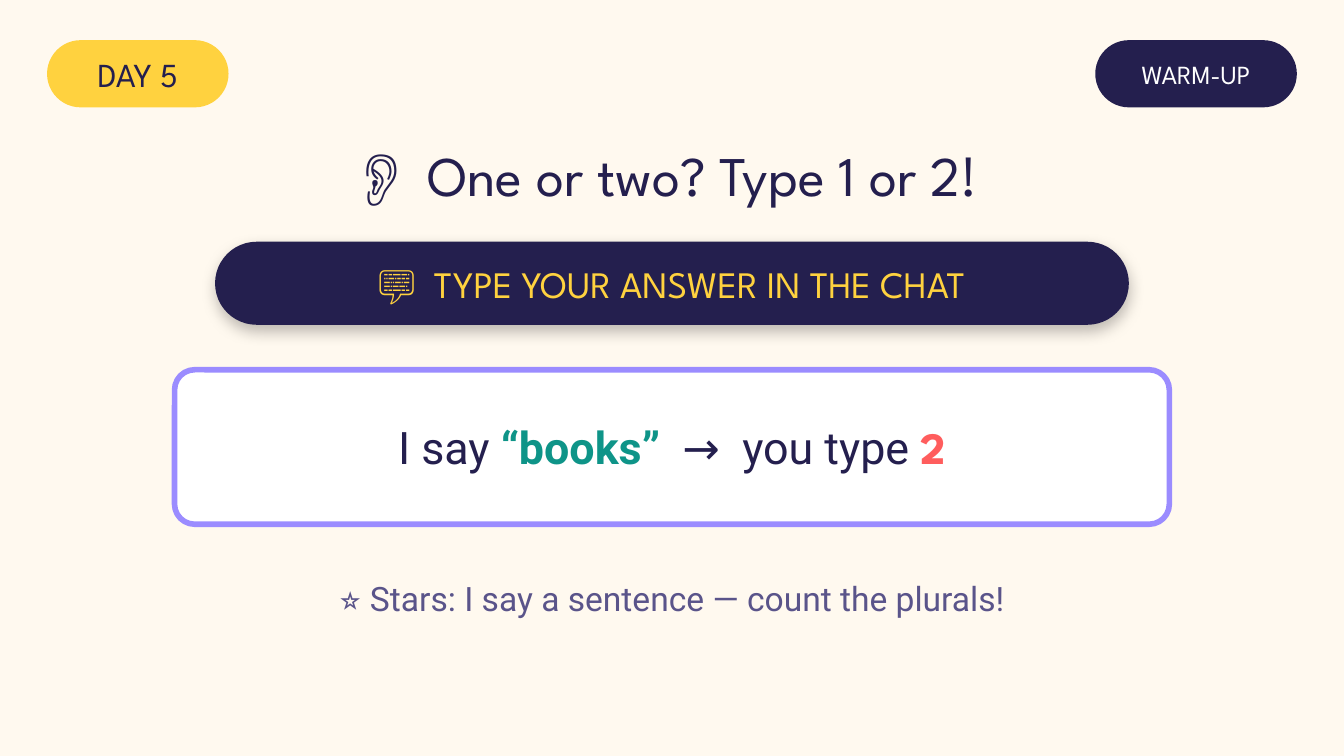
from lxml.etree import SubElement
from pptx import Presentation
from pptx.dml.color import RGBColor
from pptx.enum.shapes import MSO_SHAPE
from pptx.enum.text import MSO_ANCHOR, PP_ALIGN
from pptx.oxml.ns import qn
from pptx.util import Cm, Pt

CREAM = RGBColor(0xFF, 0xF9, 0xEF)
NAVY = RGBColor(0x24, 0x1F, 0x4E)
YELLOW = RGBColor(0xFF, 0xD2, 0x3F)
WHITE = RGBColor(0xFF, 0xFF, 0xFF)
LILAC = RGBColor(0x9B, 0x8C, 0xFF)
TEAL = RGBColor(0x0E, 0x94, 0x88)
CORAL = RGBColor(0xFF, 0x5D, 0x5D)
MUTED = RGBColor(0x5A, 0x54, 0x8A)

HEADING_FONT = "League Spartan"
BODY_FONT = "Roboto"

SLIDE_WIDTH = 25.4
SLIDE_HEIGHT = 14.29
MARGIN = 0.89


class WarmUpSlide:
    def __init__(self, presentation):
        self.slide = presentation.slides.add_slide(presentation.slide_layouts[6])
        background = self.slide.background.fill
        background.solid()
        background.fore_color.rgb = CREAM

    def style_run(self, run, size, color, font=HEADING_FONT, bold=False):
        run.font.name = font
        run.font.size = Pt(size)
        run.font.bold = bold
        run.font.color.rgb = color

    def center_text(self, shape, inset):
        frame = shape.text_frame
        frame.word_wrap = True
        frame.vertical_anchor = MSO_ANCHOR.MIDDLE
        frame.margin_left = frame.margin_right = Cm(inset)
        frame.margin_top = frame.margin_bottom = Cm(inset / 2)
        frame.paragraphs[0].alignment = PP_ALIGN.CENTER
        return frame.paragraphs[0]

    def rounded_box(self, top, width, height, fill, left=None, corner=0.5):
        if left is None:
            left = (SLIDE_WIDTH - width) / 2
        shape = self.slide.shapes.add_shape(
            MSO_SHAPE.ROUNDED_RECTANGLE, Cm(left), Cm(top), Cm(width), Cm(height))
        shape.adjustments[0] = corner
        shape.shadow.inherit = False
        shape.fill.solid()
        shape.fill.fore_color.rgb = fill
        shape.line.fill.background()
        return shape

    def pill(self, text, top, width, height, fill, size, color, left=None):
        shape = self.rounded_box(top, width, height, fill, left)
        paragraph = self.center_text(shape, 0)
        paragraph.text = text
        self.style_run(paragraph.runs[0], size, color)
        return shape

    def drop_shadow(self, shape):
        effects = shape._element.spPr.find(qn("a:effectLst"))
        shadow = SubElement(effects, qn("a:outerShdw"), blurRad=str(Pt(8)),
                            dist=str(Pt(3)), dir="5400000", algn="ctr",
                            rotWithShape="0")
        color = SubElement(shadow, qn("a:srgbClr"), val="000000")
        SubElement(color, qn("a:alpha"), val="25000")

    def card(self, top, width, height, pieces):
        shape = self.rounded_box(top, width, height, WHITE, corner=0.13)
        shape.line.color.rgb = LILAC
        shape.line.width = Pt(3)
        paragraph = self.center_text(shape, 0.25)
        for text, color, font, bold in pieces:
            run = paragraph.add_run()
            run.text = text
            self.style_run(run, 24, color, font, bold)

    def line_of_text(self, text, top, height, size, color, font):
        box = self.slide.shapes.add_textbox(
            Cm(0), Cm(top), Cm(SLIDE_WIDTH), Cm(height))
        paragraph = self.center_text(box, 0.25)
        paragraph.text = text
        self.style_run(paragraph.runs[0], size, color, font)


def main():
    presentation = Presentation()
    presentation.slide_width = Cm(SLIDE_WIDTH)
    presentation.slide_height = Cm(SLIDE_HEIGHT)

    warm_up = WarmUpSlide(presentation)
    warm_up.pill("DAY 5", 0.76, 3.43, 1.27, YELLOW, 18, NAVY, left=MARGIN)
    warm_up.pill("WARM-UP", 0.76, 3.81, 1.27, NAVY, 14, WHITE,
                 left=SLIDE_WIDTH - MARGIN - 3.81)
    warm_up.line_of_text("👂  One or two? Type 1 or 2!", 2.41, 1.78, 30,
                         NAVY, HEADING_FONT)
    banner = warm_up.pill("💬  TYPE YOUR ANSWER IN THE CHAT", 4.57, 17.27, 1.57,
                          NAVY, 20, YELLOW)
    warm_up.drop_shadow(banner)
    warm_up.card(6.99, 18.8, 2.92, [
        ("I say ", NAVY, BODY_FONT, False),
        ("“books”", TEAL, BODY_FONT, True),
        ("  →  you type ", NAVY, BODY_FONT, False),
        ("2", CORAL, HEADING_FONT, True),
    ])
    warm_up.line_of_text("⭐ Stars: I say a sentence — count the plurals!",
                         10.67, 1.27, 18, MUTED, BODY_FONT)

    presentation.save("out.pptx")


if __name__ == "__main__":
    main()
